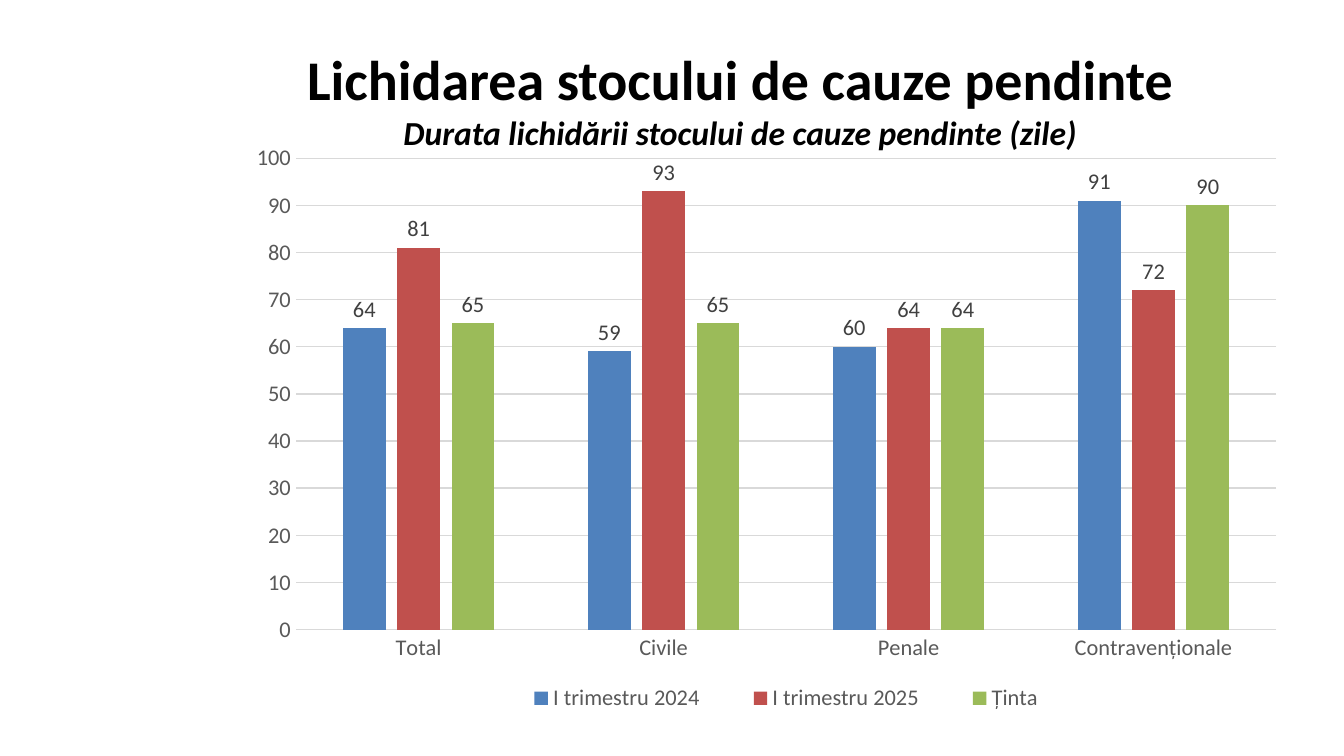
from dataclasses import dataclass

from lxml.etree import SubElement
from pptx import Presentation
from pptx.chart.data import CategoryChartData
from pptx.dml.color import RGBColor
from pptx.enum.chart import XL_CHART_TYPE as ChartType
from pptx.enum.chart import XL_LABEL_POSITION as LabelPos
from pptx.enum.chart import XL_LEGEND_POSITION as LegendPos
from pptx.enum.chart import XL_TICK_MARK as TickMark
from pptx.enum.text import MSO_ANCHOR, PP_ALIGN
from pptx.oxml.ns import qn
from pptx.util import Inches, Pt

FONT = "Calibri"
GREY = "595959"
LIGHT = "D9D9D9"


@dataclass
class Series:
    name: str
    values: tuple[int, ...]
    color: str


CATEGORIES = ("Total", "Civile", "Penale", "Contravenționale")
SERIES = (
    Series("I trimestru 2024", (64, 59, 60, 91), "4F81BD"),
    Series("I trimestru 2025", (81, 93, 64, 72), "C0504D"),
    Series("Ținta", (65, 65, 64, 90), "9BBB59"),
)


def rgb(value: str) -> RGBColor:
    return RGBColor.from_string(value)


def set_font(font, size: float, color: str, bold: bool = False, italic: bool = False) -> None:
    font.name = FONT
    font.size = Pt(size)
    font.color.rgb = rgb(color)
    font.bold = bold
    font.italic = italic


def set_line(line, color: str) -> None:
    line.color.rgb = rgb(color)
    line.width = Pt(0.75)


def add_title(s) -> None:
    sp = s.shapes.add_textbox(Inches(1.33), Inches(0.58), Inches(8.36), Inches(0.3))
    tf = sp.text_frame
    tf.word_wrap = True
    tf.vertical_anchor = MSO_ANCHOR.MIDDLE
    p = tf.paragraphs[0]
    p.text = "Lichidarea stocului de cauze pendinte\vDurata lichidării stocului de cauze pendinte (zile)"
    p.alignment = PP_ALIGN.CENTER
    heading, subtitle = p.runs
    set_font(heading.font, 30, "000000", bold=True)
    set_font(subtitle.font, 18, "000000", bold=True, italic=True)


def set_layout(parent, index: int, x: float, y: float, w: float, h: float, inner: bool = False) -> None:
    layout = parent.find(qn("c:layout"))
    if layout is None:
        layout = SubElement(parent, qn("c:layout"))
        parent.insert(index, layout)
    manual = SubElement(layout, qn("c:manualLayout"))
    settings = {"layoutTarget": "inner"} if inner else {}
    settings |= {"xMode": "edge", "yMode": "edge", "x": x, "y": y, "w": w, "h": h}
    for tag, value in settings.items():
        SubElement(manual, qn(f"c:{tag}")).set("val", str(value))


def style_axes(chart) -> None:
    for axis in (chart.category_axis, chart.value_axis):
        axis.major_tick_mark = TickMark.NONE
        axis.minor_tick_mark = TickMark.NONE
        set_font(axis.tick_labels.font, 12, GREY)
    set_line(chart.category_axis.format.line, LIGHT)
    values = chart.value_axis
    values.minimum_scale, values.maximum_scale, values.major_unit = 0, 100, 10
    values.format.line.fill.background()
    values.has_major_gridlines = True
    set_line(values.major_gridlines.format.line, LIGHT)


def style_legend(chart) -> None:
    chart.has_legend = True
    legend = chart.legend
    legend.position = LegendPos.BOTTOM
    legend.include_in_layout = False
    set_font(legend.font, 12, GREY)
    set_layout(legend._element, 1, 0.26, 0.91, 0.56, 0.07)


def style_series(series, color: str) -> None:
    series.format.fill.solid()
    series.format.fill.fore_color.rgb = rgb(color)
    series.invert_if_negative = False
    labels = series.data_labels
    labels.show_value = True
    labels.position = LabelPos.OUTSIDE_END
    set_font(labels.font, 12, "404040")


def add_duration_chart(s) -> None:
    data = CategoryChartData()
    data.categories = CATEGORIES
    for item in SERIES:
        data.add_series(item.name, item.values)
    chart = s.shapes.add_chart(
        ChartType.COLUMN_CLUSTERED, Inches(1.57), Inches(1), Inches(7.93), Inches(4.44), data
    ).chart
    set_font(chart.font, 10, "000000")
    chart.has_title = False
    style_legend(chart)
    style_axes(chart)
    plot = chart.plots[0]
    plot.vary_by_categories = False
    plot.gap_width = 219
    plot.overlap = -27
    for series, item in zip(plot.series, SERIES):
        style_series(series, item.color)
    set_layout(plot._element.getparent(), 0, 0.08, 0.04, 0.92, 0.79, inner=True)


def main() -> None:
    prs = Presentation()
    prs.slide_width = Inches(10)
    prs.slide_height = prs.slide_width * 9 // 16
    s = prs.slides.add_slide(prs.slide_layouts[6])
    add_title(s)
    add_duration_chart(s)
    prs.save("out.pptx")


if __name__ == "__main__":
    main()
